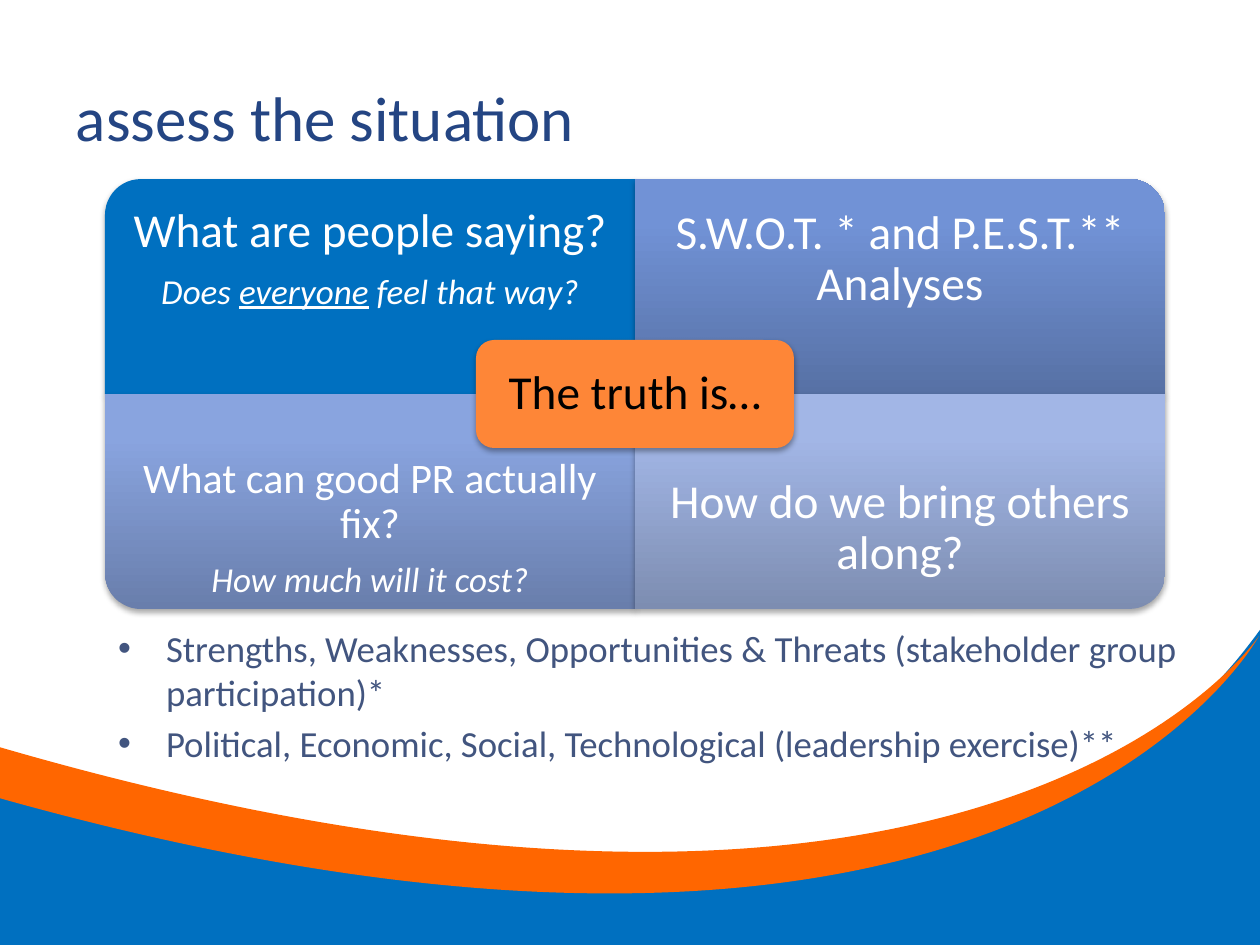
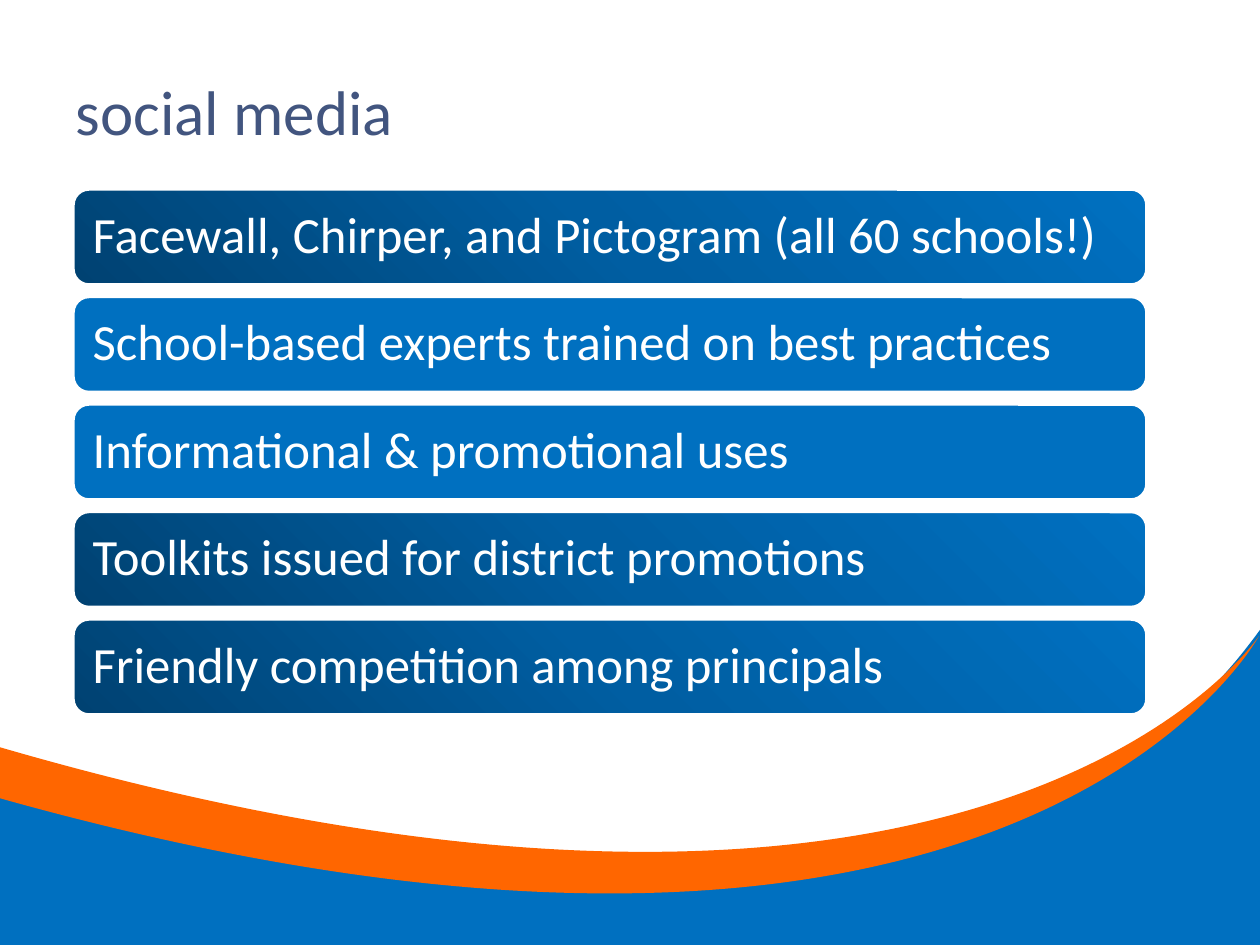
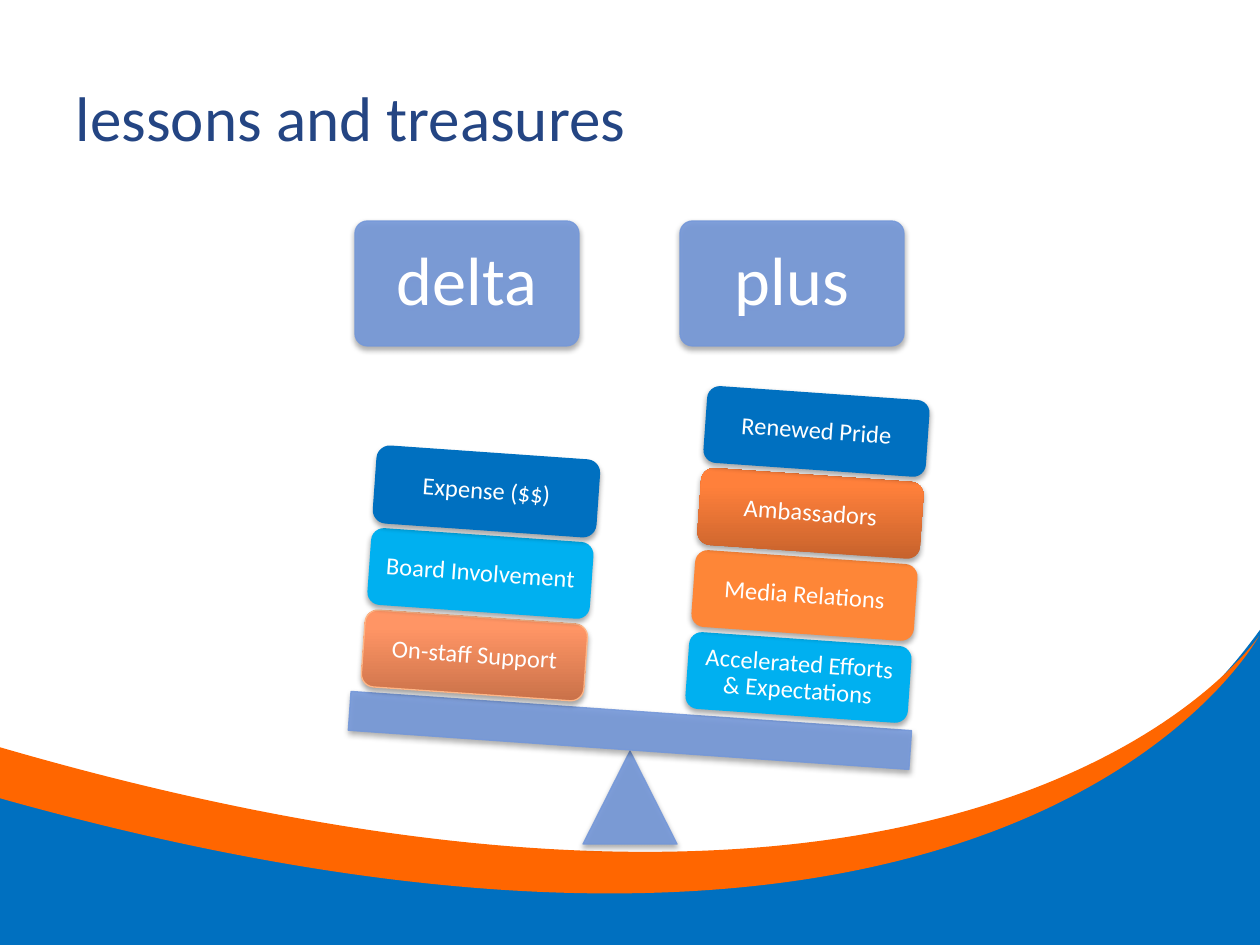
from lxml import etree
from pptx import Presentation
from pptx.dml.color import RGBColor
from pptx.enum.shapes import MSO_SHAPE
from pptx.enum.text import MSO_ANCHOR, PP_ALIGN
from pptx.oxml import parse_xml
from pptx.oxml.ns import nsdecls, qn
from pptx.util import Emu, Pt

SCALE = 914400 / 126
WIDTH, HEIGHT = 1260, 945
FONT = "Calibri"

RECTANGLE = MSO_SHAPE.RECTANGLE
ROUNDED = MSO_SHAPE.ROUNDED_RECTANGLE
ONE_ROUND = MSO_SHAPE.ROUND_1_RECTANGLE
TRIANGLE = MSO_SHAPE.ISOSCELES_TRIANGLE
LEFT, CENTER = PP_ALIGN.LEFT, PP_ALIGN.CENTER
TOP, MIDDLE = MSO_ANCHOR.TOP, MSO_ANCHOR.MIDDLE

WHITE = RGBColor(0xFF, 0xFF, 0xFF)
BLACK = RGBColor(0x00, 0x00, 0x00)
BLUE = RGBColor(0x00, 0x70, 0xC0)
SKY = RGBColor(0x00, 0xB0, 0xF0)
ORANGE = RGBColor(0xFF, 0x66, 0x00)
AMBER = RGBColor(0xFE, 0x86, 0x37)
PEACH = RGBColor(0xFE, 0xB6, 0x87)
PERIWINKLE = RGBColor(0x75, 0x98, 0xD9)
NAVY = RGBColor(0x24, 0x45, 0x83)
SLATE = RGBColor(0x42, 0x55, 0x7F)

RISING = '<a:lin ang="16200000" scaled="0"/>'
FROM_CORNER = '<a:path path="circle"><a:fillToRect t="100000" r="100000"/></a:path>'


def gradient(positions, colours, direction):
    stops = [(at, RGBColor.from_string(colour)) for at, colour in zip(positions, colours)]
    return {"stops": stops, "direction": direction}


def rising(*colours):
    return gradient((0, 80, 100), colours, RISING)


DEEP_BLUE = gradient((0, 50, 100), ("004272", "005EA2", "0070C0"), FROM_CORNER)
RUST = rising("C6622C", "FF803B", "FF813C")
SALMON = rising("C97149", "FF9565", "FF9666")

BLUE_BAND = [
    [(-1, 785)],
    [(120, 816), (311, 872), (549, 873)],
    [(1074, 882), (1211, 696), (1260, 630)],
    [(1260, 948)],
    [(-1, 946)],
    [(-1, 891), (0, 835), (-1, 785)],
]
ORANGE_BAND = [
    [(-1, 747)],
    [(993, 1036), (1259, 636), (1259, 636)],
    [(1259, 636), (1018, 1084), (-1, 798)],
    [(-1, 798), (-1, 791), (-1, 747)],
]

QUADRANTS = [
    (270, BLUE, 27, [
        (27, [("What are people saying?", "")]),
        (20, [("Does ", "i"), ("everyone", "iu"), (" feel that way?", "i")]),
    ]),
    (0, rising("5771A5", "7192D6", "6F92D9"), 27, [
        (27, [("S.W.O.T. * and P.E.S.T.** Analyses", "")]),
    ]),
    (180, rising("697EAC", "89A4DF", "88A4E1"), 24, [
        (24, [("What can good PR actually fix?", "")]),
        (20, [("How much will it cost?", "i")]),
    ]),
    (90, rising("7D8DB1", "A2B6E6", "A1B7E9"), 27, [
        (27, [("How do we bring others along?", "")]),
    ]),
]
NOTES = [
    "Strengths, Weaknesses, Opportunities & Threats (stakeholder group participation)*",
    "Political, Economic, Social, Technological (leadership exercise)**",
]
BARS = [
    ("Facewall, Chirper, and Pictogram (all 60 schools!)", DEEP_BLUE),
    ("School-based experts trained on best practices", BLUE),
    ("Informational & promotional uses", BLUE),
    ("Toolkits issued for district promotions", DEEP_BLUE),
    ("Friendly competition among principals", DEEP_BLUE),
]
SCALE_SIDES = [
    ("delta", 355, (363, 617), [
        ("On-staff Support", SALMON, PEACH),
        ("Board Involvement", SKY, None),
        ("Expense ($$)", BLUE, BLUE),
    ]),
    ("plus", 680, (687, 639), [
        ("Accelerated Efforts & Expectations", SKY, None),
        ("Media Relations", AMBER, None),
        ("Ambassadors", RUST, None),
        ("Renewed Pride", BLUE, None),
    ]),
]
TILT = 4


def px(value):
    return Emu(round(value * SCALE))


def plain(text, size):
    return [(size, [(text, "")])]


def write_text(frame, paragraphs, colour=WHITE, align=LEFT, anchor=MIDDLE,
               inset=(13, 6), line_spacing=0.9, gap=0.35, bullet=None):
    frame.word_wrap = True
    frame.vertical_anchor = anchor
    frame.margin_left = frame.margin_right = px(inset[0])
    frame.margin_top = frame.margin_bottom = px(inset[1])
    for index, (size, runs) in enumerate(paragraphs):
        paragraph = frame.paragraphs[0] if index == 0 else frame.add_paragraph()
        paragraph.alignment = align
        paragraph.line_spacing = line_spacing
        if index < len(paragraphs) - 1:
            paragraph.space_after = Pt(round(size * gap))
        if bullet:
            properties = paragraph._p.get_or_add_pPr()
            properties.set("marL", str(px(48)))
            properties.set("indent", str(-px(48)))
            etree.SubElement(properties, qn("a:buFont")).set("typeface", "Arial")
            etree.SubElement(properties, qn("a:buChar")).set("char", bullet)
        for text, style in runs:
            run = paragraph.add_run()
            run.text = text
            run.font.name = FONT
            run.font.size = Pt(size)
            run.font.color.rgb = colour
            run.font.italic = "i" in style
            run.font.underline = "u" in style


def add_text(slide, box, paragraphs, **text_format):
    shape = slide.shapes.add_textbox(*map(px, box))
    write_text(shape.text_frame, paragraphs, **text_format)


def paint(shape, fill, line=None, line_width=0.75, alpha=None, shadow=False):
    shape.shadow.inherit = False
    properties = shape._element.spPr
    if isinstance(fill, dict):
        shape.fill.background()
        stops = "".join(
            f'<a:gs pos="{at * 1000}"><a:srgbClr val="{colour}"/></a:gs>'
            for at, colour in fill["stops"])
        properties.replace(properties.find(qn("a:noFill")), parse_xml(
            f'<a:gradFill {nsdecls("a")} rotWithShape="0"><a:gsLst>{stops}</a:gsLst>'
            f'{fill["direction"]}</a:gradFill>'))
    else:
        shape.fill.solid()
        shape.fill.fore_color.rgb = fill
    if line is None:
        shape.line.fill.background()
    else:
        shape.line.color.rgb = line
        shape.line.width = Pt(line_width)
    if alpha:
        for colour in properties.iter(qn("a:srgbClr")):
            etree.SubElement(colour, qn("a:alpha")).set("val", str(alpha * 1000))
    if shadow:
        properties.find(qn("a:effectLst")).append(parse_xml(
            f'<a:outerShdw {nsdecls("a")} blurRad="40000" dist="23000" dir="5400000" '
            'rotWithShape="0"><a:srgbClr val="000000"><a:alpha val="35000"/>'
            '</a:srgbClr></a:outerShdw>'))


def add_shape(slide, kind, box, fill, rotation=0, **look):
    shape = slide.shapes.add_shape(kind, *map(px, box))
    shape.rotation = rotation
    paint(shape, fill, **look)
    return shape


def add_band(slide, segments, colour):
    points = [point for segment in segments for point in segment]
    builder = slide.shapes.build_freeform(*points[0], scale=SCALE)
    builder.add_line_segments(points[1:], close=True)
    shape = builder.convert_to_shape()
    lines = iter(list(shape._element.iter(qn("a:lnTo"))))
    for segment in segments[1:]:
        first, *others = [next(lines) for _ in segment]
        if others:
            curve = etree.Element(qn("a:cubicBezTo"))
            first.addprevious(curve)
            for line in (first, *others):
                curve.append(line[0])
                line.getparent().remove(line)
    paint(shape, colour)


def add_slide(presentation, title, title_top=38, title_colour=NAVY):
    slide = presentation.slides.add_slide(presentation.slide_layouts[6])
    add_band(slide, BLUE_BAND, BLUE)
    add_band(slide, ORANGE_BAND, ORANGE)
    add_text(slide, (63, title_top, 1134, 157), plain(title, 36),
             colour=title_colour, line_spacing=1.0)
    return slide


def build_situation(presentation):
    slide = add_slide(presentation, "assess the situation")
    left, top, width, height, text_height = 105, 179, 530, 215, 161
    for index, (rotation, fill, inset, paragraphs) in enumerate(QUADRANTS):
        row, column = divmod(index, 2)
        x, y = left + column * width, top + row * height
        box = (x, y, width, height)
        if rotation % 180:
            shift = (width - height) / 2
            box = (x + shift, y - shift, height, width)
        add_shape(slide, ONE_ROUND, box, fill, rotation=rotation, shadow=True)
        text_top = y + row * (height - text_height)
        add_text(slide, (x, text_top, width, text_height), paragraphs,
                 align=CENTER, inset=(inset, inset))
    truth = add_shape(slide, ROUNDED, (476, 340, 318, 108), AMBER, shadow=True)
    write_text(truth.text_frame, plain("The truth is…", 27), colour=BLACK,
               align=CENTER, inset=(19, 19))
    add_text(slide, (105, 620, 1092, 179), [(21, [(note, "")]) for note in NOTES],
             colour=SLATE, anchor=TOP, line_spacing=1.0, gap=0.2, bullet="•")


def build_social(presentation):
    slide = add_slide(presentation, "social media", title_top=32, title_colour=SLATE)
    top, bottom, height = 189, 715, 96
    step = (bottom - top - height) / (len(BARS) - 1)
    for index, (text, fill) in enumerate(BARS):
        bar = add_shape(slide, ROUNDED, (73, top + index * step, 1074, height), fill,
                        line=WHITE, line_width=2)
        write_text(bar.text_frame, plain(text, 29), inset=(15, 15))


def build_lessons(presentation):
    slide = add_slide(presentation, "lessons and treasures")
    glass = {"line": PERIWINKLE, "alpha": 90, "shadow": True}
    for heading, x, _, _ in SCALE_SIDES:
        head = add_shape(slide, ROUNDED, (x, 221, 224, 125), PERIWINKLE, **glass)
        head.adjustments[0] = 0.1
        write_text(head.text_frame, plain(heading, 39), align=CENTER, inset=(20, 20))
    add_shape(slide, TRIANGLE, (583, 751, 94, 93), PERIWINKLE, **glass)
    add_shape(slide, RECTANGLE, (349, 711, 562, 39), PERIWINKLE, rotation=TILT, **glass)
    for _, _, (x, y), cards in SCALE_SIDES:
        for level, (text, fill, line) in enumerate(cards):
            box = (x + 6 * level, y - 82 * level, 223, 77)
            card = add_shape(slide, ROUNDED, box, fill, rotation=TILT,
                             line=line, shadow=True)
            write_text(card.text_frame, plain(text, 14), align=CENTER, inset=(8, 8))


def main():
    presentation = Presentation()
    presentation.slide_width, presentation.slide_height = px(WIDTH), px(HEIGHT)
    build_situation(presentation)
    build_social(presentation)
    build_lessons(presentation)
    presentation.save("out.pptx")


if __name__ == "__main__":
    main()
